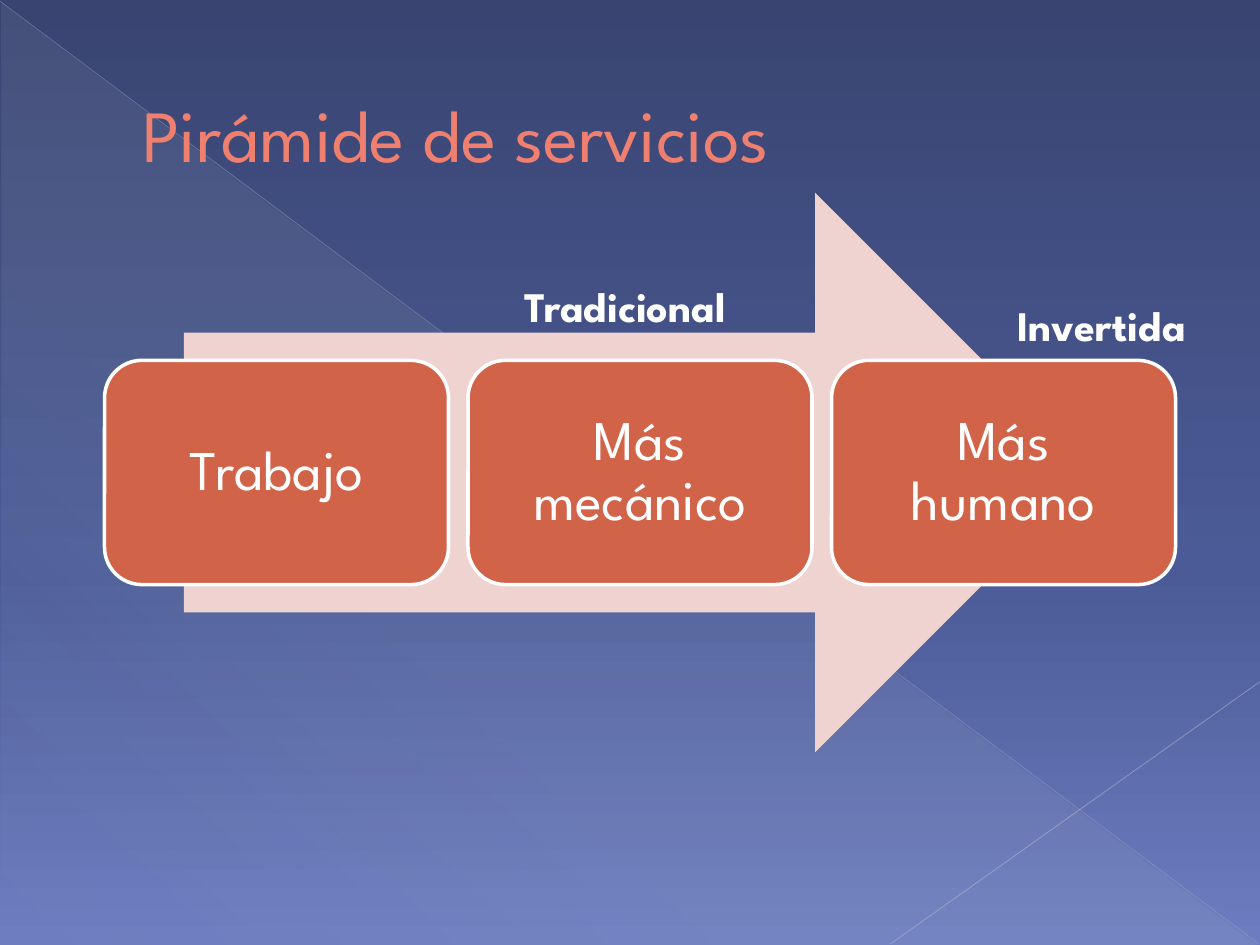
from dataclasses import dataclass

from lxml import etree
from pptx import Presentation
from pptx.dml.color import RGBColor
from pptx.enum import shapes, text
from pptx.oxml.ns import qn
from pptx.util import Inches, Pt

FONT = "League Spartan"
COLORS = {
    "title": "EF7F6E",
    "white": "FFFFFF",
    "card": "D16349",
    "arrow": "EED3D0",
    "veil": "C5D1D7",
    "long_line": "BABECD",
    "short_line": "C2C5D2",
    "bg_top": "394471",
    "bg_middle": "4B5B97",
    "bg_bottom": "6C7CC0",
}


@dataclass
class Box:
    left: float
    top: float
    width: float
    height: float

    def lengths(self) -> list:
        return [Inches(n) for n in (self.left, self.top, self.width, self.height)]


@dataclass
class Label:
    wording: str
    box: Box


@dataclass
class Stop:
    position: int
    color: str
    opacity: int = 100


@dataclass
class Line:
    start: tuple[float, float]
    end: tuple[float, float]
    color: str
    width: float
    opacity: int


LINES = [
    Line((0, 0.01), (9.99, 7.49), "long_line", 0.39, 35),
    Line((10, 5.41), (7.07, 7.49), "short_line", 0.47, 45),
]
CARDS = ["Trabajo", "Más mecánico", "Más humano"]
CARD_LEFT, CARD_STEP = 0.83, 2.885
LABELS = [
    Label("Tradicional", Box(3.74, 2.18, 2.44, 0.91)),
    Label("Invertida", Box(7.76, 2.33, 1.97, 0.5)),
]


def rgb(name: str) -> RGBColor:
    return RGBColor.from_string(COLORS[name])


def set_opacity(color_element, percent: int) -> None:
    etree.SubElement(color_element, qn("a:alpha"), val=str(percent * 1000))


def set_gradient(fill, owner, stops: list[Stop], angle: int) -> None:
    """Fill with any number of stops; the angle runs clockwise in degrees."""
    fill.gradient()
    gradient = next(owner.iter(qn("a:gradFill")))
    stop_list = gradient.find(qn("a:gsLst"))
    for old_stop in list(stop_list):
        stop_list.remove(old_stop)
    for stop in stops:
        entry = etree.SubElement(stop_list, qn("a:gs"), pos=str(stop.position * 1000))
        color = etree.SubElement(entry, qn("a:srgbClr"), val=COLORS[stop.color])
        if stop.opacity < 100:
            set_opacity(color, stop.opacity)
    gradient.find(qn("a:lin")).set("ang", str(angle * 60000))


def add_preset(slide, preset, box: Box):
    shape = slide.shapes.add_shape(preset, *box.lengths())
    shape.shadow.inherit = False
    shape.line.fill.background()
    return shape


def add_line(slide, line: Line) -> None:
    ends = [Inches(n) for n in (*line.start, *line.end)]
    connector = slide.shapes.add_connector(shapes.MSO_CONNECTOR.STRAIGHT, *ends)
    connector.line.width = Pt(line.width)
    connector.line.color.rgb = rgb(line.color)
    set_opacity(next(connector.element.iter(qn("a:srgbClr"))), line.opacity)
    etree.SubElement(connector.element.spPr, qn("a:effectLst"))


def write(shape, wording: str, size: int, color: str, bold: bool = False,
          align=text.PP_ALIGN.CENTER, anchor=text.MSO_ANCHOR.MIDDLE):
    frame = shape.text_frame
    frame.word_wrap = True
    frame.vertical_anchor = anchor
    paragraph = frame.paragraphs[0]
    paragraph.alignment = align
    run = paragraph.add_run()
    run.text = wording
    run.font.name = FONT
    run.font.size = Pt(size)
    run.font.bold = bold
    run.font.color.rgb = rgb(color)
    return paragraph


def add_backdrop(slide) -> None:
    set_gradient(slide.background.fill, slide.element,
                 [Stop(0, "bg_top"), Stop(60, "bg_middle"), Stop(100, "bg_bottom")], 90)
    veil = add_preset(slide, shapes.MSO_SHAPE.RIGHT_TRIANGLE, Box(0.01, 0.02, 9.98, 7.48))
    set_gradient(veil.fill, veil.element,
                 [Stop(0, "veil", 10), Stop(70, "veil", 8), Stop(100, "veil", 1)], 133)
    for line in LINES:
        add_line(slide, line)


def add_title(slide, label: Label) -> None:
    title = slide.shapes.add_textbox(*label.box.lengths())
    paragraph = write(title, label.wording, 42, "title", align=text.PP_ALIGN.LEFT)
    paragraph._p.get_or_add_pPr().set("marL", str(Inches(0.53)))


def add_card(slide, label: Label) -> None:
    card = add_preset(slide, shapes.MSO_SHAPE.ROUNDED_RECTANGLE, label.box)
    card.fill.solid()
    card.fill.fore_color.rgb = rgb("card")
    card.line.color.rgb = rgb("white")
    card.line.width = Pt(2)
    frame = card.text_frame
    frame.margin_left = frame.margin_right = Inches(0.13)
    frame.margin_top = frame.margin_bottom = Inches(0.13)
    write(card, label.wording, 32, "white").line_spacing = 0.9


def add_label(slide, label: Label) -> None:
    caption = slide.shapes.add_textbox(*label.box.lengths())
    write(caption, label.wording, 24, "white", bold=True, anchor=text.MSO_ANCHOR.TOP)


def main() -> None:
    deck = Presentation()
    deck.slide_width, deck.slide_height = Inches(10), Inches(7.5)
    slide = deck.slides.add_slide(deck.slide_layouts[6])

    add_backdrop(slide)
    add_title(slide, Label("Pirámide de servicios", Box(0.5, 0.29, 9, 1.53)))

    arrow = add_preset(slide, shapes.MSO_SHAPE.RIGHT_ARROW, Box(1.46, 1.53, 7.23, 4.44))
    arrow.fill.solid()
    arrow.fill.fore_color.rgb = rgb("arrow")

    for index, wording in enumerate(CARDS):
        left = CARD_LEFT + index * CARD_STEP
        add_card(slide, Label(wording, Box(left, 2.86, 2.73, 1.78)))
    for label in LABELS:
        add_label(slide, label)

    deck.save("out.pptx")


if __name__ == "__main__":
    main()
